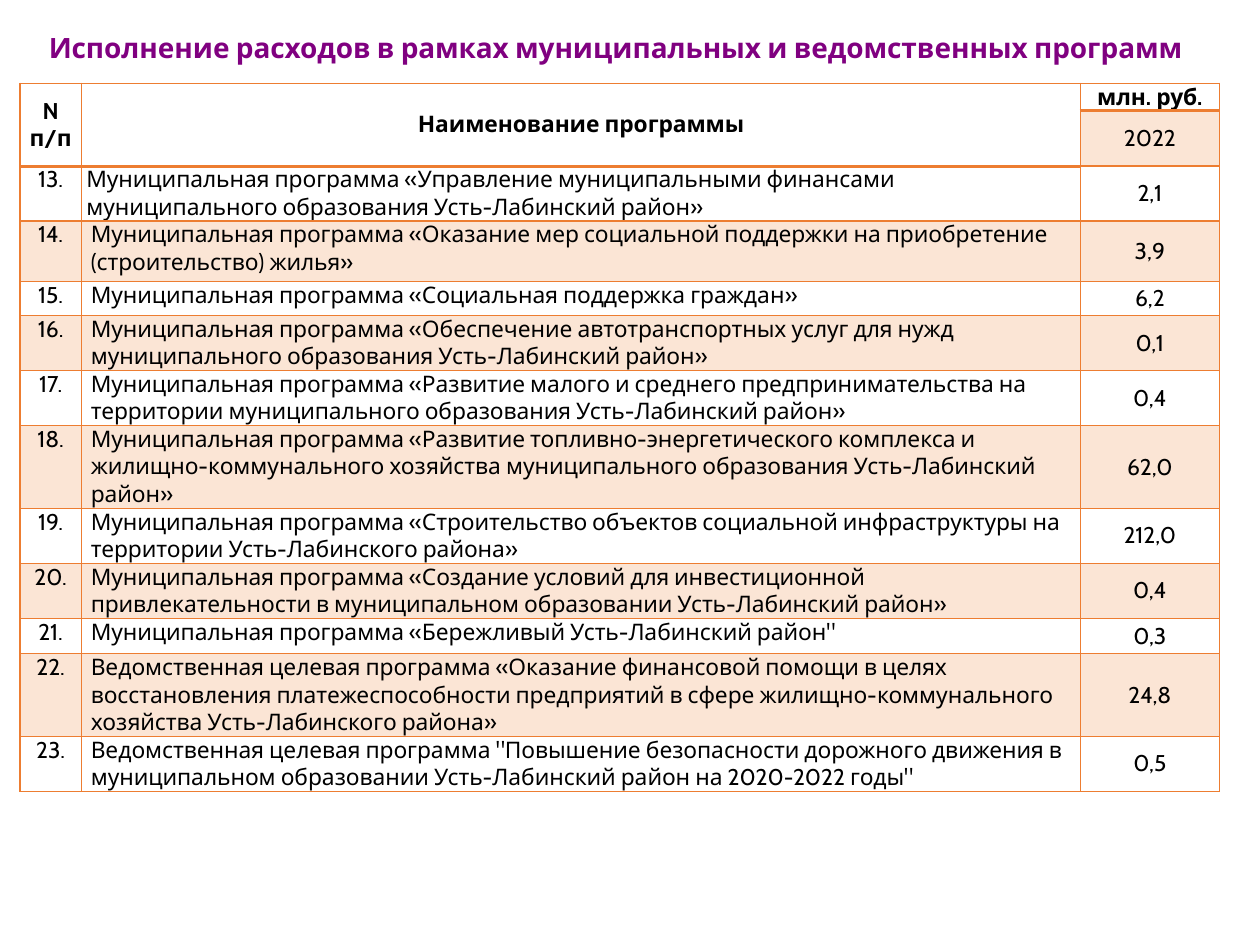
import copy

import pptx
import pptx.util
import pptx.oxml.ns
from lxml import etree
from pptx.dml.color import RGBColor
from pptx.enum.text import MSO_ANCHOR, MSO_AUTO_SIZE, PP_ALIGN
from pptx.util import Cm, Pt

COLORS = {"title": "800080", "text": "000000", "accent": "ED7D31"}
BAND_ALPHA = 20000
COL_WIDTHS = [1.24, 20.14, 2.8]
ROW_HEIGHTS = [0.55, 1.1, 1.11, 1.22, 0.68, 1.11, 1.11, 1.65, 1.11, 1.11, 0.71, 1.65, 1.11]
FIRST_NUMBER = 13
PROGRAMS = [
    ("Муниципальная программа «Управление муниципальными финансами муниципального образования Усть-Лабинский район»", "2,1"),
    ("Муниципальная программа «Оказание мер социальной поддержки на приобретение (строительство) жилья»", "3,9"),
    ("Муниципальная программа «Социальная поддержка граждан»", "6,2"),
    ("Муниципальная программа «Обеспечение автотранспортных услуг для нужд муниципального образования Усть-Лабинский район»", "0,1"),
    ("Муниципальная программа «Развитие малого и среднего предпринимательства на территории муниципального образования Усть-Лабинский район»", "0,4"),
    ("Муниципальная программа «Развитие топливно-энергетического комплекса и жилищно-коммунального хозяйства муниципального образования Усть-Лабинский район»", "62,0"),
    ("Муниципальная программа «Строительство объектов социальной инфраструктуры на территории Усть-Лабинского района»", "212,0"),
    ("Муниципальная программа «Создание условий для инвестиционной привлекательности в муниципальном образовании Усть-Лабинский район»", "0,4"),
    ("Муниципальная программа «Бережливый Усть-Лабинский район\"", "0,3"),
    ("Ведомственная целевая программа «Оказание финансовой помощи в целях восстановления платежеспособности предприятий в сфере жилищно-коммунального хозяйства Усть-Лабинского района»", "24,8"),
    ("Ведомственная целевая программа \"Повышение безопасности дорожного движения в муниципальном образовании Усть-Лабинский район на 2020-2022 годы\"", "0,5"),
]
qn = pptx.oxml.ns.qn


def write(p, text, size, color, bold, align):
    p.alignment = align
    p.text = text
    for r in p.runs:
        for name, value in {"name": "Cabin", "size": Pt(size), "bold": bold}.items():
            setattr(r.font, name, value)
        r.font.color.rgb = RGBColor.from_string(COLORS[color])
    # A line break needs the text size too, or it makes its line taller.
    for br in p._p.findall(qn("a:br")):
        br.append(copy.deepcopy(p.runs[0]._r.rPr))


def add_borders(cell, widths):
    """Draw the cell's edges; widths maps L, R, T, B to points."""
    tcPr = cell._tc.get_or_add_tcPr()
    for side, width in widths.items():
        ln = etree.SubElement(tcPr, qn(f"a:ln{side}"), w=str(Pt(width)))
        fill = etree.SubElement(ln, qn("a:solidFill"))
        etree.SubElement(fill, qn("a:srgbClr"), val=COLORS["accent"])


prs = pptx.Presentation()
prs.slide_width, prs.slide_height = Cm(25.4), Cm(19.05)
s = prs.slides.add_slide(prs.slide_layouts[5])

title = s.shapes.title
for name, value in {"left": 0.73, "top": 0.48, "width": 23.85, "height": 1.19}.items():
    setattr(title, name, Cm(value))
tf = title.text_frame
for name, value in {"word_wrap": True, "auto_size": MSO_AUTO_SIZE.NONE,
                    "vertical_anchor": MSO_ANCHOR.TOP}.items():
    setattr(tf, name, value)
write(tf.paragraphs[0], "Исполнение расходов в рамках муниципальных и ведомственных программ",
      16, "title", True, PP_ALIGN.LEFT)

rows = [("N\vп/п", "Наименование программы", "млн. руб."), ("", "", "2022")]
for number, (program, amount) in enumerate(PROGRAMS, FIRST_NUMBER):
    rows.append((f"{number}.", program, amount))

table = s.shapes.add_table(len(rows), len(COL_WIDTHS), Cm(0.4), Cm(1.68),
                           Cm(sum(COL_WIDTHS)), Cm(sum(ROW_HEIGHTS))).table
table.first_row = table.horz_banding = False
for column, width in zip(table.columns, COL_WIDTHS):
    column.width = Cm(width)
for row, height in zip(table.rows, ROW_HEIGHTS):
    row.height = Cm(height)
for col in (0, 1):
    table.cell(0, col).merge(table.cell(1, col))

for i, texts in enumerate(rows):
    for j, text in enumerate(texts):
        cell = table.cell(i, j)
        header = i < 2
        # The heavy rule closes the two-row headings and the unit heading.
        heavy_row = 0 if j == 2 else 1
        add_borders(cell, {"L": 1, "R": 1,
                           "T": 2 if i == heavy_row + 1 else 1,
                           "B": 2 if i == heavy_row or (i == 0 and j < 2) else 1})
        if i % 2 and (j == 2 or not header):
            cell.fill.solid()
            cell.fill.fore_color.rgb = RGBColor.from_string(COLORS["accent"])
            color = cell._tc.tcPr.find(qn("a:solidFill"))[0]
            etree.SubElement(color, qn("a:alpha"), val=str(BAND_ALPHA))
        else:
            cell.fill.background()
        narrow = header or j == 0 or (i == 2 and j == 1)
        side = Cm(0.1 if narrow else 0.19)
        middle = header or j == 2
        for name, value in {"margin_left": side, "margin_right": side,
                            "margin_top": 0, "margin_bottom": 0,
                            "vertical_anchor": MSO_ANCHOR.MIDDLE if middle else MSO_ANCHOR.TOP}.items():
            setattr(cell, name, value)
        if text:
            align = PP_ALIGN.LEFT if j == 1 and not header else PP_ALIGN.CENTER
            write(cell.text_frame.paragraphs[0], text, 13, "text", i == 0, align)

prs.save("out.pptx")
